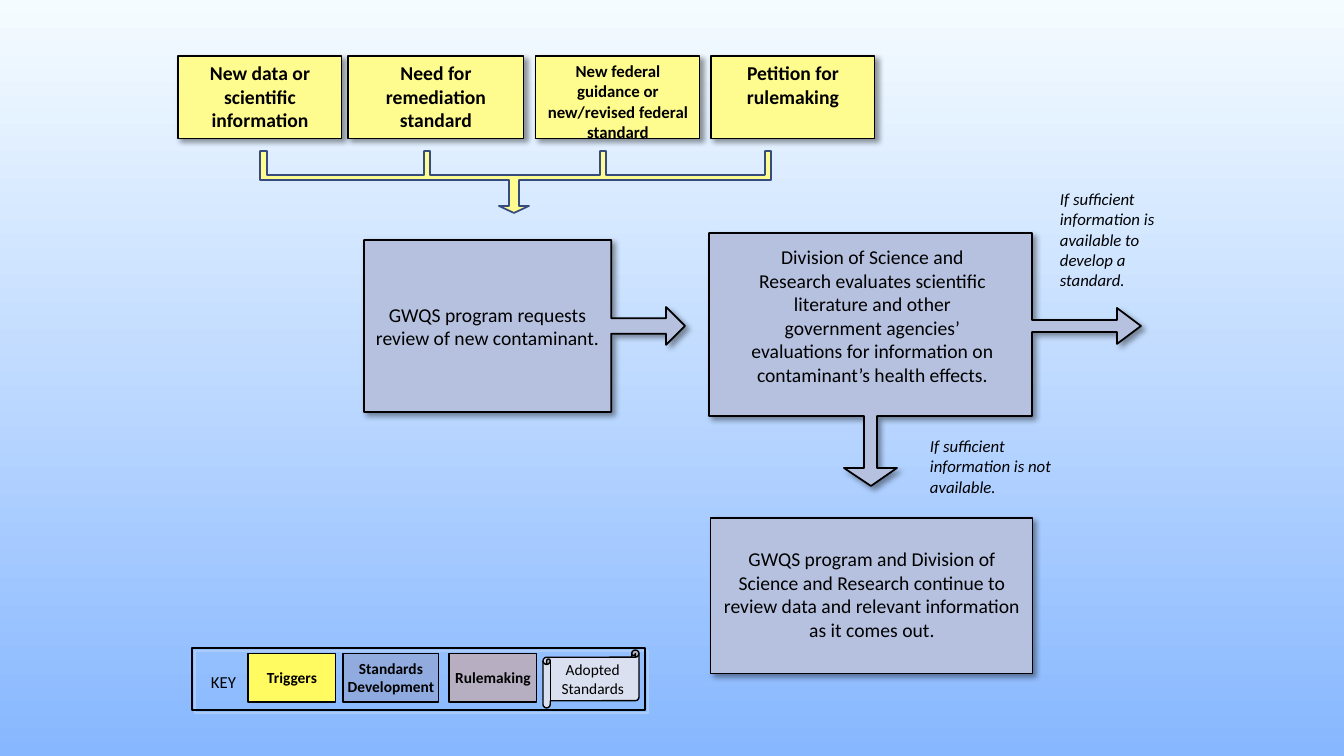
from dataclasses import dataclass

from lxml import etree
from pptx import Presentation
from pptx.dml.color import RGBColor
from pptx.enum.shapes import MSO_SHAPE
from pptx.enum.text import MSO_ANCHOR, PP_ALIGN
from pptx.oxml.ns import qn
from pptx.util import Pt

EMU_PER_PX = 914400 / 100.8
RECTANGLE = MSO_SHAPE.RECTANGLE
ARROW_CALLOUT = MSO_SHAPE.RIGHT_ARROW_CALLOUT
SCROLL = MSO_SHAPE.HORIZONTAL_SCROLL
TOP, MIDDLE = MSO_ANCHOR.TOP, MSO_ANCHOR.MIDDLE
LEFT, CENTER = PP_ALIGN.LEFT, PP_ALIGN.CENTER


@dataclass(frozen=True)
class Theme:
    font: str = "Calibri"
    ink: str = "000000"
    sky_top: str = "F5FCFF"
    sky_bottom: str = "87B7FF"
    trigger: str = "FFFC8F"
    collector_line: str = "374B7F"
    step: str = "B5C1DF"
    key_glow: str = "ACCBF9"
    key_trigger: str = "FFFB61"
    key_development: str = "90A2CF"
    key_rulemaking: str = "CBA7A1"
    key_adopted: str = "DAE0EF"
    body: int = 14
    note: int = 12
    key: int = 11
    thin: float = 0.75
    medium: float = 1.25
    thick: float = 1.5


THEME = Theme()
# Shadow: colour, opacity in percent, blur and distance in points
SOFT_SHADOW = (THEME.ink, 40, 4, 3)
KEY_SHADOW = (THEME.key_glow, 100, 0, 2.8)


def px(value):
    return round(value * EMU_PER_PX)


def set_opacity(color_element, percent):
    etree.SubElement(color_element, qn("a:alpha"), val=str(percent * 1000))


class FlowSlide:
    def __init__(self, presentation, theme):
        self.theme = theme
        self.slide = presentation.slides.add_slide(presentation.slide_layouts[6])
        self.shapes = self.slide.shapes

    def background(self):
        fill = self.slide.background.fill
        fill.gradient()
        fill.gradient_angle = 270
        colors = (self.theme.sky_top, self.theme.sky_bottom)
        for position, (stop, color) in enumerate(zip(fill.gradient_stops, colors)):
            stop.position = position
            stop.color.rgb = RGBColor.from_string(color)

    def paint(self, shape, fill, line_width, line=None, shadow=None, opacity=100):
        if fill:
            shape.fill.solid()
            shape.fill.fore_color.rgb = RGBColor.from_string(fill)
            if opacity < 100:
                set_opacity(shape._element.spPr.find(f".//{qn('a:srgbClr')}"), opacity)
        else:
            shape.fill.background()
        shape.line.color.rgb = RGBColor.from_string(line or self.theme.ink)
        shape.line.width = Pt(line_width)
        shape.shadow.inherit = False
        if shadow:
            color, percent, blur, distance = shadow
            effects = shape._element.spPr.find(qn("a:effectLst"))
            outer = etree.SubElement(
                effects, qn("a:outerShdw"), blurRad=str(Pt(blur)), dist=str(Pt(distance)),
                dir="2700000", algn="tl", rotWithShape="0")
            set_opacity(etree.SubElement(outer, qn("a:srgbClr"), val=color), percent)

    def set_text(self, shape, text, size, align=CENTER, anchor=TOP, bold=False,
                 italic=False, wrap=True):
        frame = shape.text_frame
        frame.text = text
        frame.word_wrap = wrap
        frame.vertical_anchor = anchor
        for paragraph in frame.paragraphs:
            paragraph.alignment = align
            for run in paragraph.runs:
                run.font.name = self.theme.font
                run.font.size = Pt(size)
                run.font.bold = bold
                run.font.italic = italic
                run.font.color.rgb = RGBColor.from_string(self.theme.ink)

    def box(self, bounds, fill, line_width, kind=RECTANGLE, **paint):
        shape = self.shapes.add_shape(kind, *map(px, bounds))
        self.paint(shape, fill, line_width, **paint)
        return shape

    def label(self, bounds, text, size, **style):
        self.set_text(self.shapes.add_textbox(*map(px, bounds)), text, size, **style)

    def outline(self, points, fill, **paint):
        builder = self.shapes.build_freeform(*points[0], scale=EMU_PER_PX)
        builder.add_line_segments(points[1:], close=True)
        self.paint(builder.convert_to_shape(), fill, self.theme.medium, **paint)


def collector_points():
    """Bar with four upright ticks and one arrow pointing down."""
    tick_top, bar_top, bar_bottom = 151, 175, 180
    points = []
    for left, right in ((260, 267), (424, 430), (600, 606), (765, 771)):
        points += [(left, bar_top), (left, tick_top), (right, tick_top), (right, bar_top)]
    arrow = [(519, bar_bottom), (519, 206), (529, 206), (514, 213),
             (499, 206), (509, 206), (509, bar_bottom)]
    return points + [(771, bar_bottom)] + arrow + [(260, bar_bottom)]


def evaluation_points():
    """Box with one arrow to the right and one arrow down."""
    left, top, right, bottom = 709, 233, 1032, 416
    right_arrow = [(right, 320), (1117, 320), (1117, 308), (1141, 326),
                   (1117, 344), (1117, 332), (right, 332)]
    down_arrow = [(877, bottom), (877, 468), (897, 468), (871, 486),
                  (844, 468), (864, 468), (864, bottom)]
    return [(left, top), (right, top), *right_arrow, (right, bottom),
            *down_arrow, (left, bottom)]


def main():
    presentation = Presentation()
    presentation.slide_width, presentation.slide_height = px(1344), px(756)
    theme = THEME
    flow = FlowSlide(presentation, theme)
    flow.background()

    # Triggers
    triggers = (
        (178, 164, "New data or scientific information", theme.body),
        (348, 176, "Need for remediation standard", theme.body),
        (536, 164, "New federal guidance or new/revised federal standard", theme.note),
        (711, 164, "Petition for rulemaking", theme.body),
    )
    for left, width, text, size in triggers:
        trigger = flow.box((left, 56, width, 83), theme.trigger, theme.thin,
                           shadow=SOFT_SHADOW)
        flow.set_text(trigger, text, size, bold=True)
    flow.outline(collector_points(), theme.trigger, line=theme.collector_line)

    # Review request
    request = flow.box((364, 240, 321, 172), theme.step, theme.medium,
                       kind=ARROW_CALLOUT, shadow=SOFT_SHADOW)
    for index, value in enumerate((0.09, 0.11, 0.11, 0.77)):
        request.adjustments[index] = value
    flow.set_text(request, "GWQS program requests review of new contaminant.",
                  theme.body, anchor=MIDDLE)

    # Evaluation and its two outcomes
    flow.outline(evaluation_points(), theme.step, shadow=SOFT_SHADOW)
    flow.label((735, 240, 275, 129),
               "Division of Science and Research evaluates scientific literature and "
               "other government agencies’ evaluations for information on "
               "contaminant’s health effects.", theme.body)
    monitoring = flow.box((711, 518, 322, 156), theme.step, theme.thin, shadow=SOFT_SHADOW)
    flow.set_text(monitoring, "GWQS program and Division of Science and Research continue "
                  "to review data and relevant information as it comes out.", theme.body)
    monitoring.text_frame.margin_top = px(29)
    notes = (
        ((1050, 184, 154, 92), "If sufficient information is available to develop a standard."),
        ((920, 431, 153, 72), "If sufficient information is not available."),
    )
    for bounds, text in notes:
        flow.label(bounds, text, theme.note, align=LEFT, italic=True)

    # Key
    flow.box((192, 648, 453, 62), None, theme.thick, shadow=KEY_SHADOW)
    flow.label((195, 667, 57, 30), "KEY", theme.note)
    key_entries = (
        (248, 88, "Triggers", theme.key_trigger, 100),
        (343, 96, "Standards\nDevelopment", theme.key_development, 66),
        (449, 88, "Rulemaking", theme.key_rulemaking, 65),
    )
    for left, width, text, fill, opacity in key_entries:
        entry = flow.box((left, 653, width, 49), fill, theme.thin, opacity=opacity)
        flow.set_text(entry, text, theme.key, anchor=MIDDLE, bold=True, wrap=False)
    adopted = flow.box((543, 650, 96, 58), theme.key_adopted, 1, kind=SCROLL)
    flow.set_text(adopted, "Adopted\nStandards", theme.key, anchor=MIDDLE)

    presentation.save("out.pptx")


if __name__ == "__main__":
    main()
